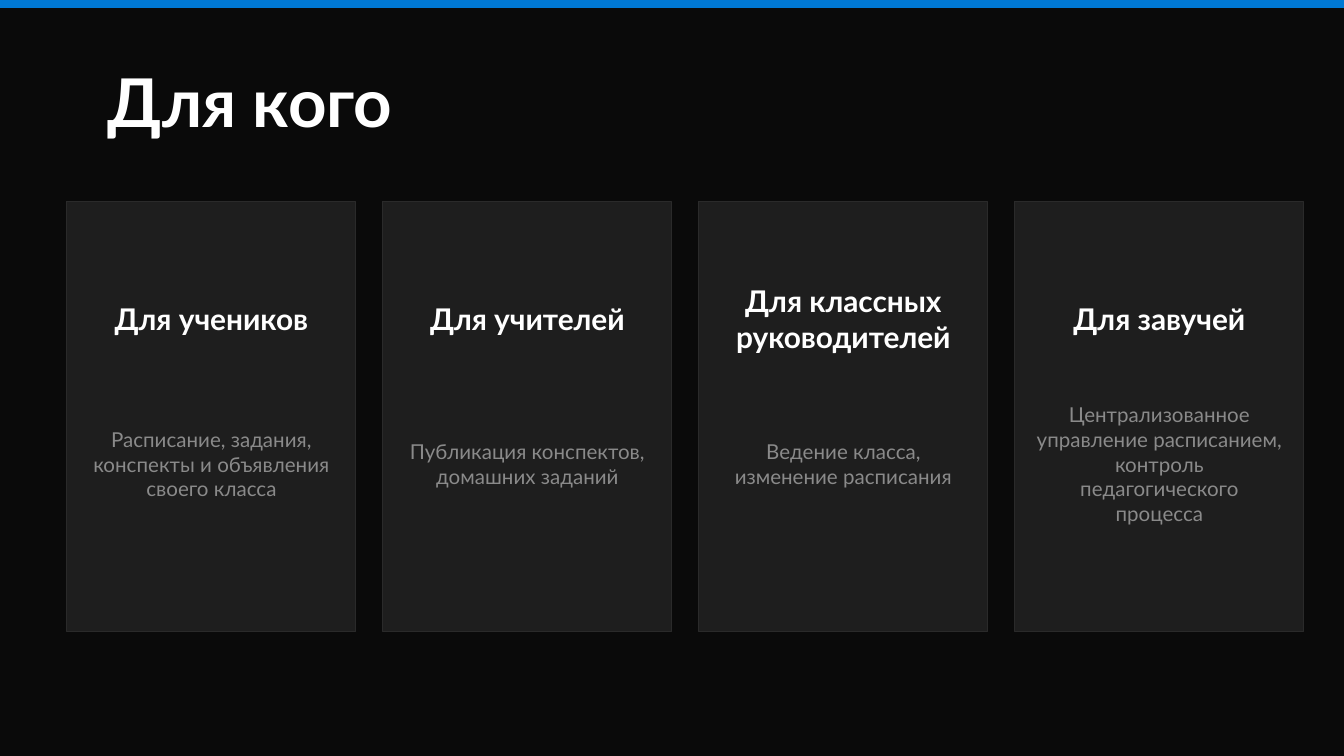
from pptx import Presentation
from pptx.dml.color import RGBColor
from pptx.enum.shapes import MSO_SHAPE
from pptx.enum.text import MSO_ANCHOR, MSO_AUTO_SIZE, PP_ALIGN
from pptx.util import Pt

TITLE = "Для кого"
CARDS = [
    ("Для учеников", "Расписание, задания, конспекты и объявления своего класса"),
    ("Для учителей", "Публикация конспектов, домашних заданий"),
    ("Для классных руководителей", "Ведение класса, изменение расписания"),
    ("Для завучей", "Централизованное управление расписанием, контроль педагогического процесса"),
]

COLORS = {
    "background": "0A0A0A",
    "accent": "0078D4",
    "card": "1E1E1E",
    "border": "2A2A2A",
    "heading": "FFFFFF",
    "body": "8A8A8A",
}
FONT = "Lato"

EMU_PER_PX = 914400 / 134.4
SLIDE_WIDTH, SLIDE_HEIGHT = 1344, 756
CARD_LEFT, CARD_TOP, CARD_WIDTH, CARD_HEIGHT = 67, 202, 289, 430
CARD_STEP = 316
BODY_INSET = 20


def px(length):
    return round(length * EMU_PER_PX)


def color(name):
    return RGBColor.from_string(COLORS[name])


def add_rectangle(slide, left, top, width, height, fill, border=None):
    box = slide.shapes.add_shape(
        MSO_SHAPE.RECTANGLE, px(left), px(top), px(width), px(height))
    box.shadow.inherit = False
    box.fill.solid()
    box.fill.fore_color.rgb = color(fill)
    if border:
        box.line.color.rgb = color(border)
        box.line.width = Pt(0.5)
    else:
        box.line.fill.background()


def write(box, text, size, ink, bold=False, align=PP_ALIGN.CENTER):
    """Fill a text holder with one vertically centred paragraph, without margins."""
    frame = box.text_frame
    frame.word_wrap = True
    frame.auto_size = MSO_AUTO_SIZE.NONE
    frame.vertical_anchor = MSO_ANCHOR.MIDDLE
    frame.margin_left = frame.margin_right = 0
    frame.margin_top = frame.margin_bottom = 0
    para = frame.paragraphs[0]
    para.alignment = align
    span = para.add_run()
    span.text = text
    span.font.name = FONT
    span.font.size = Pt(size)
    span.font.bold = bold
    span.font.color.rgb = color(ink)


def add_text(slide, left, top, width, height, *content, **style):
    box = slide.shapes.add_textbox(px(left), px(top), px(width), px(height))
    write(box, *content, **style)


def add_card(slide, left, heading, body):
    add_rectangle(slide, left, CARD_TOP, CARD_WIDTH, CARD_HEIGHT, "card", "border")
    add_text(slide, left, 289, CARD_WIDTH, 60, heading, 16, "heading", bold=True)
    add_text(slide, left + BODY_INSET, 363, CARD_WIDTH - 2 * BODY_INSET, 202,
             body, 11, "body")


def main():
    deck = Presentation()
    deck.slide_width, deck.slide_height = px(SLIDE_WIDTH), px(SLIDE_HEIGHT)
    page = deck.slides.add_slide(deck.slide_layouts[5])
    page.background.fill.solid()
    page.background.fill.fore_color.rgb = color("background")

    add_rectangle(page, 0, 0, SLIDE_WIDTH, 8, "accent")

    title = page.shapes.title
    title.left, title.top = px(108), px(54)
    title.width, title.height = px(1210), px(94)
    write(title, TITLE, 36, "heading", bold=True, align=PP_ALIGN.LEFT)

    for index, (heading, body) in enumerate(CARDS):
        add_card(page, CARD_LEFT + index * CARD_STEP, heading, body)

    deck.save("out.pptx")


if __name__ == "__main__":
    main()
